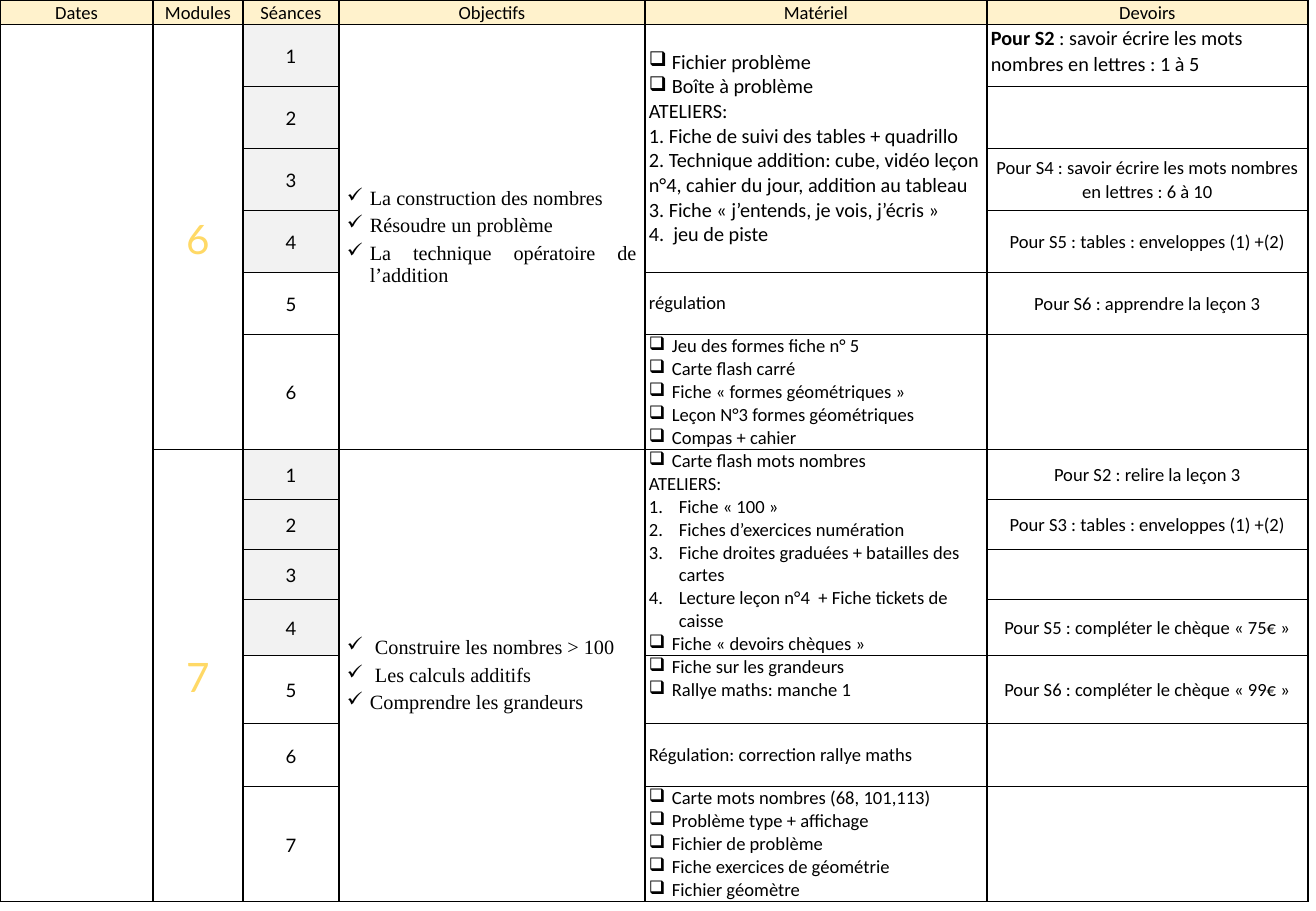
from lxml.etree import SubElement
from pptx import Presentation
from pptx.dml.color import RGBColor
from pptx.enum.text import MSO_ANCHOR, PP_ALIGN
from pptx.oxml import parse_xml
from pptx.oxml.ns import nsdecls, qn
from pptx.util import Emu, Pt

PX = 914400 / 121.5

BLACK = RGBColor(0x00, 0x00, 0x00)
CREAM = RGBColor(0xFF, 0xF2, 0xCC)
GREY = RGBColor(0xF2, 0xF2, 0xF2)
GOLD = RGBColor(0xFF, 0xD9, 0x66)

COLUMN_WIDTHS = [153, 90, 96, 306, 342, 321]
ROW_HEIGHTS = [24] + [62] * 5 + [115] + [50] * 3 + [56, 68, 63, 115]
HEADERS = ["Dates", "Modules", "Séances", "Objectifs", "Matériel", "Devoirs"]
DATES, MODULE, SESSION, GOALS, MATERIAL, HOMEWORK = range(6)
WORKSHOP_SESSIONS = 4

# Paragraph kinds: bullet tag, its attribute and the indent in px
BOX = ("a:buChar", {"char": "❑"}, 23)
CHECK = ("a:buChar", {"char": "✓"}, 23)
NUMBER = ("a:buAutoNum", {"type": "arabicPeriod"}, 30)
PLAIN = None

# Each material entry: first session, last session, paragraphs, format
MODULES = [
    {
        "number": "6", "first_row": 1, "sessions": 6,
        "goals": ["La construction des nombres", "Résoudre un problème",
                  "La technique opératoire de l’addition"],
        "material": [
            (1, 4, [(BOX, "Fichier problème"), (BOX, "Boîte à problème"),
                    (PLAIN, "ATELIERS:"),
                    (PLAIN, "1. Fiche de suivi des tables + quadrillo"),
                    (PLAIN, "2. Technique addition: cube, vidéo leçon n°4, "
                            "cahier du jour, addition au tableau"),
                    (PLAIN, "3. Fiche « j’entends, je vois, j’écris »"),
                    (PLAIN, "4.  jeu de piste")], {"size": 12}),
            (5, 5, [(PLAIN, "régulation")], {}),
            (6, 6, [(BOX, "Jeu des formes fiche n° 5"), (BOX, "Carte flash carré"),
                    (BOX, "Fiche « formes géométriques »"),
                    (BOX, "Leçon N°3 formes géométriques"),
                    (BOX, "Compas + cahier")], {}),
        ],
        "homework": {
            1: (" : savoir écrire les mots nombres en lettres : 1 à 5",
                {"bold_lead": "Pour S2", "size": 12, "align": PP_ALIGN.LEFT,
                 "anchor": MSO_ANCHOR.TOP}),
            3: ("Pour S4 : savoir écrire les mots nombres en lettres : 6 à 10", {}),
            4: ("Pour S5 : tables : enveloppes (1) +(2)", {}),
            5: ("Pour S6 : apprendre la leçon 3", {}),
        },
    },
    {
        "number": "7", "first_row": 7, "sessions": 7,
        "goals": [" Construire les nombres > 100", " Les calculs additifs",
                  "Comprendre les grandeurs"],
        "material": [
            (1, 4, [(BOX, "Carte flash mots nombres"), (PLAIN, "ATELIERS:"),
                    (NUMBER, "Fiche « 100 »"),
                    (NUMBER, "Fiches d’exercices numération"),
                    (NUMBER, "Fiche droites graduées + batailles des cartes"),
                    (NUMBER, "Lecture leçon n°4  + Fiche tickets de caisse"),
                    (BOX, "Fiche « devoirs chèques »")], {}),
            (5, 5, [(BOX, "Fiche sur les grandeurs"),
                    (BOX, "Rallye maths: manche 1")], {"anchor": MSO_ANCHOR.TOP}),
            (6, 6, [(PLAIN, "Régulation: correction rallye maths")], {}),
            (7, 7, [(BOX, "Carte mots nombres (68, 101,113)"),
                    (BOX, "Problème type + affichage"), (BOX, "Fichier de problème"),
                    (BOX, "Fiche exercices de géométrie"),
                    (BOX, "Fichier géomètre")], {}),
        ],
        "homework": {
            1: ("Pour S2 : relire la leçon 3", {}),
            2: ("Pour S3 : tables : enveloppes (1) +(2)", {}),
            4: ("Pour S5 : compléter le chèque « 75€ »", {}),
            5: ("Pour S6 : compléter le chèque « 99€ »", {}),
        },
    },
]


def px(length):
    return Emu(round(length * PX))


def add_bullet(paragraph, kind):
    tag, attributes, indent = kind
    properties = paragraph._p.get_or_add_pPr()
    properties.set("marL", str(px(indent)))
    properties.set("indent", str(-px(indent)))
    SubElement(properties, qn(tag), attributes)


def write(cell, paragraphs, size=11, font="Calibri", color=BLACK,
          align=PP_ALIGN.LEFT, anchor=MSO_ANCHOR.MIDDLE, side=4,
          before=0, spacing=1.0, bold_lead=""):
    cell.vertical_anchor = anchor
    cell.margin_left = cell.margin_right = px(side)
    frame = cell.text_frame
    for index, (kind, text) in enumerate(paragraphs):
        paragraph = frame.add_paragraph() if index else frame.paragraphs[0]
        paragraph.alignment = align
        paragraph.line_spacing = spacing
        paragraph.space_before = Pt(before)
        if kind:
            add_bullet(paragraph, kind)
        for part, bold in ((bold_lead, True), (text, False)):
            if part:
                run = paragraph.add_run()
                run.text = part
                run.font.size = Pt(size)
                run.font.name = font
                run.font.bold = bold
                run.font.color.rgb = color


def write_label(cell, text, **style):
    write(cell, [(PLAIN, text)],
          **{"align": PP_ALIGN.CENTER, "before": 14, "spacing": 1.07, **style})


def paint(cell, color):
    cell.fill.solid()
    cell.fill.fore_color.rgb = color


def add_borders(cell):
    properties = cell._tc.get_or_add_tcPr()
    for position, side in enumerate("LRTB"):
        properties.insert(position, parse_xml(
            f'<a:ln{side} {nsdecls("a")} w="12700"><a:solidFill>'
            f'<a:srgbClr val="{BLACK}"/></a:solidFill></a:ln{side}>'))


def add_planning_table(slide):
    table = slide.shapes.add_table(
        len(ROW_HEIGHTS), len(COLUMN_WIDTHS), 0, 0,
        px(sum(COLUMN_WIDTHS)), px(sum(ROW_HEIGHTS))).table
    table.first_row = table.horz_banding = False
    for column, width in zip(table.columns, COLUMN_WIDTHS):
        column.width = px(width)
    for row, height in zip(table.rows, ROW_HEIGHTS):
        row.height = px(height)
    for cell in table.iter_cells():
        cell.margin_top = cell.margin_bottom = 0
        cell.fill.background()
        add_borders(cell)
    return table


def merge_rows(table, column, first, last):
    cell = table.cell(first, column)
    if last > first:
        cell.merge(table.cell(last, column))
    return cell


def fill_module(table, module):
    first = module["first_row"]
    last = first + module["sessions"] - 1

    # Module number and goals
    write_label(merge_rows(table, MODULE, first, last), module["number"],
                size=24, font="Lato", color=GOLD)
    write(merge_rows(table, GOALS, first, last),
          [(CHECK, goal) for goal in module["goals"]],
          size=12, font="Times New Roman", align=PP_ALIGN.JUSTIFY, side=8, before=3)

    # Session numbers, with the workshop sessions shaded
    for session in range(1, module["sessions"] + 1):
        cell = table.cell(first + session - 1, SESSION)
        write_label(cell, str(session), font="Lato")
        if session <= WORKSHOP_SESSIONS:
            paint(cell, GREY)

    # Material and homework
    for start, end, paragraphs, style in module["material"]:
        cell = merge_rows(table, MATERIAL, first + start - 1, first + end - 1)
        write(cell, paragraphs, **style)
    for session, (text, style) in module["homework"].items():
        write_label(table.cell(first + session - 1, HOMEWORK), text, **style)


def main():
    presentation = Presentation()
    presentation.slide_width = px(1316)
    presentation.slide_height = px(911)
    slide = presentation.slides.add_slide(presentation.slide_layouts[6])

    table = add_planning_table(slide)
    for column, header in enumerate(HEADERS):
        write_label(table.cell(0, column), header)
        paint(table.cell(0, column), CREAM)
    merge_rows(table, DATES, 1, len(ROW_HEIGHTS) - 1)
    for module in MODULES:
        fill_module(table, module)

    presentation.save("out.pptx")


if __name__ == "__main__":
    main()
